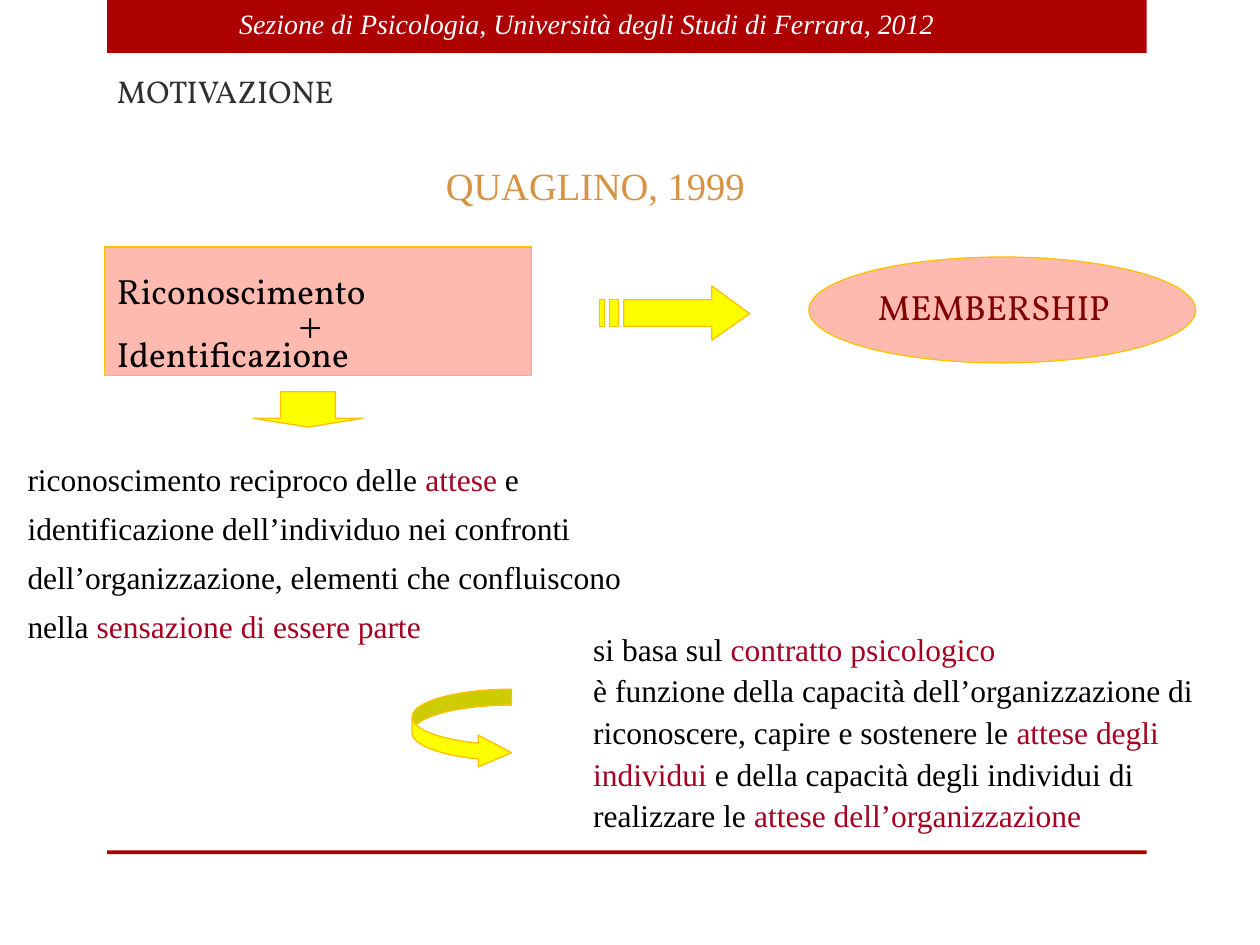
from pptx import Presentation
from pptx.dml.color import RGBColor
from pptx.enum import shapes, text
from pptx.util import Inches, Pt

COLORS = {
    "band": "AD0101", "white": "FFFFFF", "pink": "FFBAB0", "gold": "FFC000",
    "yellow": "FFFF00", "black": "000000", "accent": "A50021",
    "maroon": "800000", "title": "303030", "citation": "D89243",
}
SERIF, DISPLAY = "Times New Roman", "Vollkorn"

prs = Presentation()
prs.slide_width, prs.slide_height = Inches(10), Inches(7.5)
slide = prs.slides.add_slide(prs.slide_layouts[6])


def write(shape, paragraphs, size, font=SERIF, color="black", spacing=1.0,
          italic=False, anchor=text.MSO_ANCHOR.TOP):
    """Fill shape with paragraphs, each a list of runs; odd runs are accented."""
    frame = shape.text_frame
    frame.word_wrap = True
    frame.vertical_anchor = anchor
    for i, runs in enumerate(paragraphs):
        paragraph = frame.paragraphs[0] if i == 0 else frame.add_paragraph()
        paragraph.alignment = text.PP_ALIGN.LEFT
        paragraph.line_spacing = spacing
        for j, words in enumerate(runs):
            run = paragraph.add_run()
            run.text = words
            run.font.size, run.font.name, run.font.italic = Pt(size), font, italic
            run.font.color.rgb = RGBColor.from_string(COLORS["accent" if j % 2 else color])


def paint(shape, fill, line=None):
    shape.shadow.inherit = False
    shape.fill.solid()
    shape.fill.fore_color.rgb = RGBColor.from_string(COLORS[fill])
    if line:
        shape.line.color.rgb = RGBColor.from_string(COLORS[line])
        shape.line.width = Pt(0.75)
    else:
        shape.line.fill.background()


# Header and footer bands
for top, height in [(0, 0.42), (6.75, 0.03)]:
    band = slide.shapes.add_shape(shapes.MSO_SHAPE.RECTANGLE, Inches(0.85), Inches(top),
                                  Inches(8.25), Inches(height))
    paint(band, "band")

# Concept boxes
recognition = slide.shapes.add_shape(shapes.MSO_SHAPE.RECTANGLE, Inches(0.83), Inches(1.96),
                                     Inches(3.39), Inches(1.02))
membership = slide.shapes.add_shape(shapes.MSO_SHAPE.OVAL, Inches(6.42), Inches(2.04),
                                    Inches(3.07), Inches(0.84))
for concept in (recognition, membership):
    paint(concept, "pink", "gold")
write(recognition, [["Riconoscimento"], ["Identificazione"]], 20, font=DISPLAY,
      spacing=1.5, anchor=text.MSO_ANCHOR.MIDDLE)
write(membership, [["MEMBERSHIP"]], 20, font=DISPLAY, color="maroon",
      spacing=0.8, anchor=text.MSO_ANCHOR.MIDDLE)

# Striped arrow from recognition to membership
shaft_top, shaft_bottom = 2.38, 2.59
contours = [[(5.65, 2.27), (5.65, shaft_top), (4.95, shaft_top), (4.95, shaft_bottom),
             (5.65, shaft_bottom), (5.65, 2.7), (5.95, 2.49)]]
for left, right in [(4.84, 4.91), (4.76, 4.8)]:
    contours.append([(left, shaft_top), (left, shaft_bottom),
                     (right, shaft_bottom), (right, shaft_top)])
outlines = [[(Inches(x), Inches(y)) for x, y in contour] for contour in contours]
builder = slide.shapes.build_freeform(*outlines[0][0])
builder.add_line_segments(outlines[0][1:], close=True)
for stripe in outlines[1:]:
    builder.move_to(*stripe[0])
    builder.add_line_segments(stripe[1:], close=True)
paint(builder.convert_to_shape(), "yellow", "gold")

# Down arrow and curved arrow
for kind, left, top, width, height, adjustments in [
    (shapes.MSO_SHAPE.DOWN_ARROW, 2.01, 3.11, 0.87, 0.28, (0.5, 0.25)),
    (shapes.MSO_SHAPE.CURVED_RIGHT_ARROW, 3.27, 5.47, 0.79, 0.63, (0.2, 0.4, 0.42)),
]:
    arrow = slide.shapes.add_shape(kind, Inches(left), Inches(top),
                                   Inches(width), Inches(height))
    for i, value in enumerate(adjustments):
        arrow.adjustments[i] = value
    paint(arrow, "yellow", "gold")

# Texts: left, top, width, height, paragraphs, format
texts = [
    (1.8, 0, 5.86, 0.37, [["Sezione di Psicologia, Università degli Studi di Ferrara, 2012"]],
     dict(size=16, color="white", italic=True)),
    (0.83, 0.52, 9.01, 0.7, [["MOTIVAZIONE"]], dict(size=18, font=DISPLAY, color="title")),
    (3.44, 1.24, 2.74, 0.73, [["QUAGLINO, 1999"]], dict(size=22, color="citation")),
    (2.27, 2.41, 0.4, 0.44, [["+"]], dict(size=24, spacing=0.8)),
    (0.12, 3.51, 5.39, 1.66,
     [["riconoscimento reciproco delle ", "attese",
       " e identificazione dell’individuo nei confronti dell’organizzazione, "
       "elementi che confluiscono nella ", "sensazione di essere parte"]],
     dict(size=18, spacing=1.3)),
    (4.61, 4.92, 5.39, 1.9,
     [["si basa sul ", "contratto psicologico"],
      ["è funzione della capacità dell’organizzazione di riconoscere, capire e sostenere le ",
       "attese degli individui", " e della capacità degli individui di realizzare le ",
       "attese dell’organizzazione"]],
     dict(size=18, spacing=1.1)),
]
for left, top, width, height, paragraphs, style in texts:
    box = slide.shapes.add_textbox(Inches(left), Inches(top), Inches(width), Inches(height))
    write(box, paragraphs, **style)

prs.save("out.pptx")
